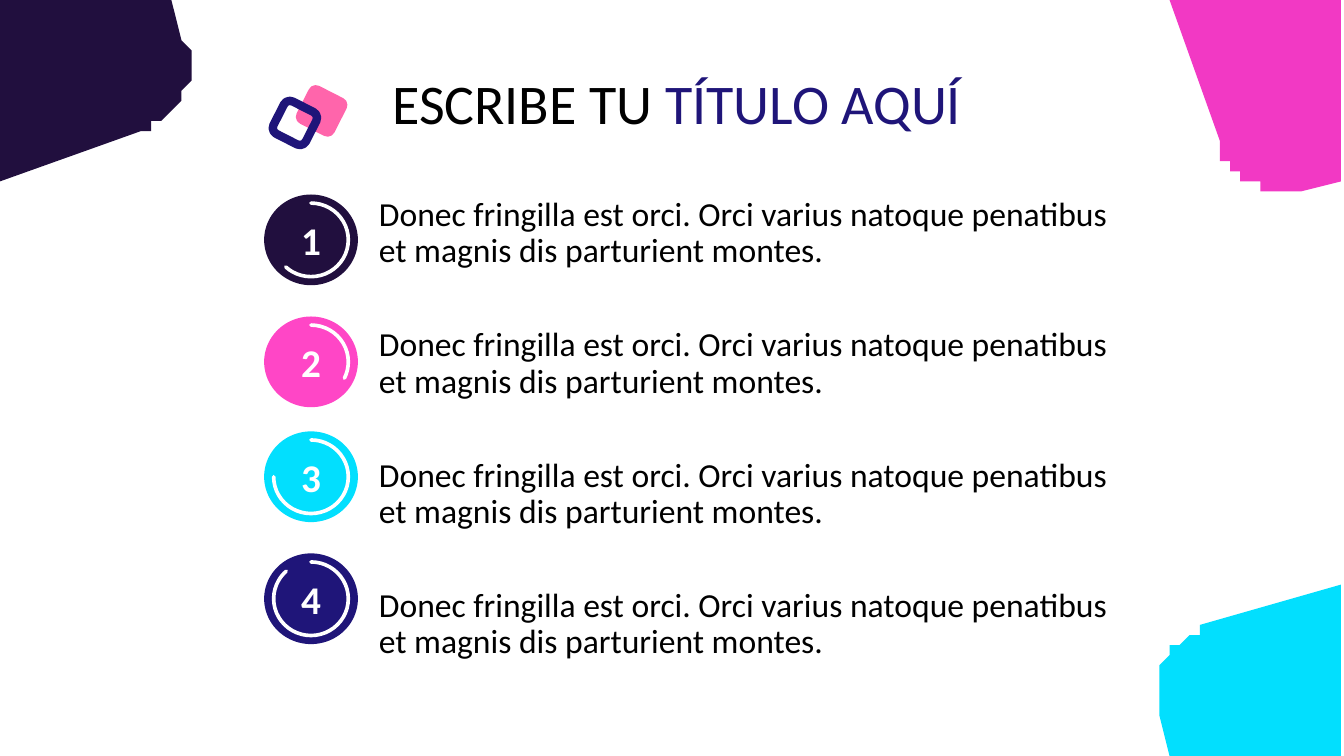
"""Build a title slide page with four numbered points and rounded corner blocks."""
import math

from pptx import Presentation
from pptx import util as u
from pptx.dml.color import RGBColor
from pptx.enum import shapes, text

NIGHT = RGBColor(0x21, 0x0F, 0x3E)
NAVY = RGBColor(0x1F, 0x15, 0x79)
CYAN = RGBColor(0x02, 0xDF, 0xFE)
PINK = RGBColor(0xFF, 0x46, 0xC6)
MAGENTA = RGBColor(0xF2, 0x39, 0xC4)
ROSE = RGBColor(0xFF, 0x65, 0xAB)
BLACK = RGBColor(0, 0, 0)
WHITE = RGBColor(0xFF, 0xFF, 0xFF)

POINT = "Donec fringilla est orci. Orci varius natoque penatibus et magnis dis parturient montes."
TOP_LEFT = {"vertical_anchor": text.MSO_ANCHOR.TOP, "word_wrap": True,
            "auto_size": text.MSO_AUTO_SIZE.NONE}
BODY = {"alignment": text.PP_ALIGN.LEFT, "line_spacing": 0.9, "space_before": u.Pt(10)}
CENTRED = {"alignment": text.PP_ALIGN.CENTER}

deck = Presentation()
deck.slide_width, deck.slide_height = u.Inches(13.33), u.Inches(7.5)
CELL = deck.slide_height / 75
COLUMNS, ROWS = 133.3, 75
page = deck.slides.add_slide(deck.slide_layouts[5])


def write(box, spans, size, frame_format, para_format, bold=False):
    """Fill a box with one paragraph of coloured spans."""
    frame = box.text_frame
    para = frame.paragraphs[0]
    for target, values in ((frame, frame_format), (para, para_format)):
        for name, value in values.items():
            setattr(target, name, value)
    for words, color in spans:
        span = para.add_run()
        span.text = words
        for name, value in {"name": "Calibri", "size": u.Pt(size), "bold": bold}.items():
            setattr(span.font, name, value)
        span.font.color.rgb = color


def draw(kind, centre_x, centre_y, width, height, fill=None, line=None, weight=0):
    """Add a preset shape around a centre given in grid cells."""
    shape = page.shapes.add_shape(
        kind, *(round(n * CELL) for n in
                (centre_x - width / 2, centre_y - height / 2, width, height)))
    shape.shadow.inherit = False
    for paint, color in ((shape.fill, fill), (shape.line.fill, line)):
        if color is None:
            paint.background()
        else:
            paint.solid()
            paint.fore_color.rgb = color
    if line is not None:
        shape.line.width = u.Pt(weight)
    return shape


RADIUS, STEPS = 6.9, 24
corner_blocks = [
    (MAGENTA, [(COLUMNS, 17.5), (COLUMNS, 0), (116.1, 0)], (127.35, 12.15), 162, 72),
    (NIGHT, [(0, 17.5), (0, 0), (17.1, 0)], (11.9, 6.3), -18, 72),
    (CYAN, [(COLUMNS, 57.8), (COLUMNS, ROWS), (116, ROWS)], (121.4, 69.05), 162, 252),
]
for color, corners, (centre_x, centre_y), start, end in corner_blocks:
    angles = [math.radians(start + (end - start) * step / STEPS) for step in range(STEPS + 1)]
    curve = [(centre_x + RADIUS * math.cos(a), centre_y + RADIUS * math.sin(a)) for a in angles]
    outline = page.shapes.build_freeform(*corners[0], scale=CELL)
    outline.add_line_segments(corners[1:] + curve, close=True)
    block = outline.convert_to_shape()
    block.shadow.inherit = False
    block.fill.solid()
    block.fill.fore_color.rgb = color
    block.line.fill.background()

points = [(NIGHT, 23.8, 133), (PINK, 35.9, 26), (CYAN, 47.3, 180), (NAVY, 59.4, 228)]
for index, (color, centre_y, arc_end) in enumerate(points):
    badge = draw(shapes.MSO_SHAPE.OVAL, 30.85, centre_y, 9.3, 9, fill=color)
    insets = dict.fromkeys(("margin_left", "margin_right", "margin_top", "margin_bottom"), 0)
    write(badge, [(str(index + 1), WHITE)], 28,
          {**insets, "vertical_anchor": text.MSO_ANCHOR.MIDDLE}, CENTRED, bold=True)

    ring = draw(shapes.MSO_SHAPE.ARC, 30.85, centre_y, 7.4, 7.3, line=WHITE, weight=2.6)
    for number, degrees in enumerate((270, arc_end)):
        ring.adjustments[number] = degrees * 0.6
    ring.line._get_or_add_ln().set("cap", "rnd")

    box = page.shapes.add_textbox(
        *(round(n * CELL) for n in (36.6, 19.1 + 12.93 * index, 75.3, 8.8)))
    write(box, [(POINT, BLACK)], 24, TOP_LEFT, BODY)

title = page.shapes.title
for name, cells in {"left": 37.9, "top": 7.1, "width": 69.2, "height": 8.7}.items():
    setattr(title, name, round(cells * CELL))
write(title, [("ESCRIBE TU ", BLACK), ("TÍTULO AQUÍ", NAVY)], 40, TOP_LEFT, BODY)

squares = [
    {"centre_x": 31.9, "centre_y": 11, "width": 4.2, "height": 4.2, "fill": ROSE},
    {"centre_x": 29.25, "centre_y": 12.2, "width": 3.6, "height": 3.6,
     "line": NAVY, "weight": 6},
]
for square in squares:
    tile = draw(shapes.MSO_SHAPE.ROUNDED_RECTANGLE, **square)
    tile.rotation = 27
    tile.adjustments[0] = 0.18

deck.save("out.pptx")
